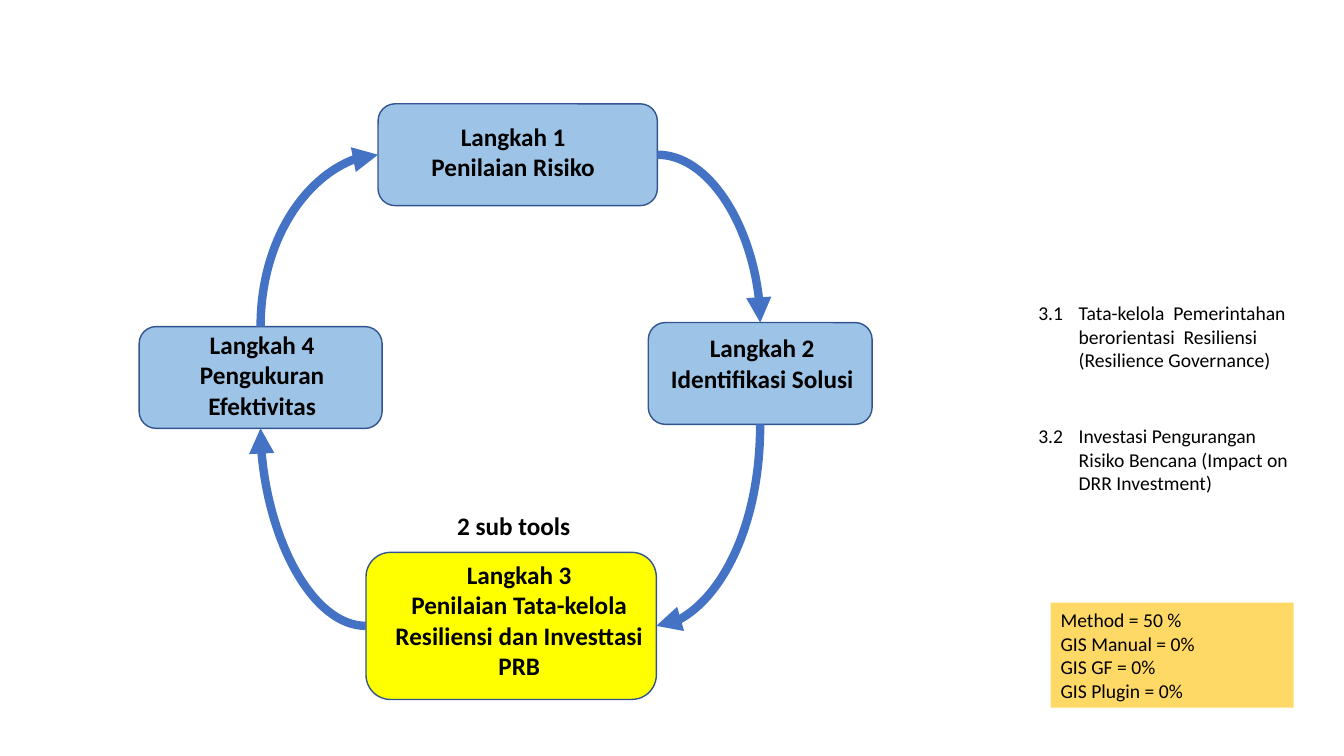
from dataclasses import dataclass

import pptx
import pptx.dml.color
import pptx.enum.shapes
import pptx.enum.text
import pptx.oxml
import pptx.oxml.ns
import pptx.util
from pptx.util import Inches

Area = tuple[float, float, float, float]  # left, top, width, height in inches


@dataclass(frozen=True)
class Theme:
    font: str = "Calibri"
    text: str = "000000"
    step: str = "9DC3E6"
    current_step: str = "FFFF00"
    outline: str = "325491"
    arrow: str = "4472C4"
    note: str = "FFD966"
    heading_size: int = 18
    body_size: int = 14
    outline_width: int = 1
    arrow_width: int = 6


@dataclass(frozen=True)
class Step:
    box: Area
    label_area: Area
    title: str
    name: str
    fill: str


@dataclass(frozen=True)
class Arrow:
    """A curve leaving one box sideways and meeting another vertically."""
    side_step: int
    side: int
    vertical_step: int
    vertical_side: int
    points_to_side: bool


@dataclass(frozen=True)
class Label:
    area: Area
    text: str
    hanging: float = 0


THEME = Theme()
TOP, LEFT, BOTTOM, RIGHT = range(4)  # connection sites of a rounded rectangle

STEPS = {
    4: Step((1.38, 3.24, 2.41, 1.01), (1.4, 3.22, 2.4, 1.01),
            "Langkah 4", "Pengukuran Efektivitas", THEME.step),
    3: Step((3.63, 5.48, 2.88, 1.46), (3.7, 5.5, 2.9, 1.31),
            "Langkah 3", "Penilaian Tata-kelola Resiliensi dan Investtasi PRB",
            THEME.current_step),
    2: Step((6.43, 3.2, 2.22, 1.01), (6.48, 3.25, 2.16, 0.71),
            "Langkah 2", "Identifikasi Solusi", THEME.step),
    1: Step((3.75, 1.03, 2.77, 1.01), (3.94, 1.15, 2.3, 0.71),
            "Langkah 1", "Penilaian Risiko", THEME.step),
}

ARROWS = [
    Arrow(1, RIGHT, 2, TOP, False),
    Arrow(3, RIGHT, 2, BOTTOM, True),
    Arrow(3, LEFT, 4, BOTTOM, False),
    Arrow(1, LEFT, 4, TOP, True),
]

SUB_TOOLS = [
    Label((10.2, 2.94, 2.87, 0.81), "3.1\tTata-kelola  Pemerintahan berorientasi  "
          "Resiliensi (Resilience Governance)", 0.4),
    Label((10.2, 4.16, 2.83, 0.81), "3.2\tInvestasi Pengurangan Risiko Bencana "
          "(Impact on DRR Investment)", 0.4),
]
SUB_TOOLS_HEADING = Label((4.43, 5.01, 1.33, 0.4), "2 sub tools")
PROGRESS = Label((10.42, 5.98, 2.41, 1.04),
                 "Method = 50 %\nGIS Manual = 0%\nGIS GF = 0%\nGIS Plugin = 0%")


def color(value: str) -> pptx.dml.color.RGBColor:
    return pptx.dml.color.RGBColor.from_string(value)


def inches(area: Area) -> list[pptx.util.Length]:
    return [Inches(length) for length in area]


def write_text(shape, text: str, heading: bool, hanging: float = 0) -> None:
    frame = shape.text_frame
    frame.word_wrap = True
    frame.text = text
    for paragraph in frame.paragraphs:
        alignment = pptx.enum.text.PP_ALIGN
        paragraph.alignment = alignment.CENTER if heading else alignment.LEFT
        if hanging:
            properties = paragraph._p.get_or_add_pPr()
            properties.set("marL", str(Inches(hanging)))
            properties.set("indent", str(-Inches(hanging)))
        for run in paragraph.runs:
            run.font.name = THEME.font
            run.font.size = pptx.util.Pt(THEME.heading_size if heading else THEME.body_size)
            run.font.bold = heading
            run.font.color.rgb = color(THEME.text)


def add_label(slide, label: Label, heading: bool = False):
    shape = slide.shapes.add_textbox(*inches(label.area))
    write_text(shape, label.text, heading, label.hanging)
    return shape


def add_box(slide, area: Area, preset, fill: str, outlined: bool):
    shape = slide.shapes.add_shape(preset, *inches(area))
    shape.shadow.inherit = False
    shape.fill.solid()
    shape.fill.fore_color.rgb = color(fill)
    if outlined:
        shape.line.color.rgb = color(THEME.outline)
        shape.line.width = pptx.util.Pt(THEME.outline_width)
    else:
        shape.line.fill.background()
    return shape


def add_arrow(slide, arrow: Arrow, boxes: dict) -> None:
    connector = slide.shapes.add_connector(
        pptx.enum.shapes.MSO_CONNECTOR.CURVE, 0, 0, 0, 0)
    connector.begin_connect(boxes[arrow.side_step], arrow.side)
    connector.end_connect(boxes[arrow.vertical_step], arrow.vertical_side)
    connector.line.color.rgb = color(THEME.arrow)
    connector.line.width = pptx.util.Pt(THEME.arrow_width)
    # Quarter curve, arrowhead and no shadow
    properties = connector._element.spPr
    properties.find(pptx.oxml.ns.qn("a:prstGeom")).set("prst", "curvedConnector2")
    end = "headEnd" if arrow.points_to_side else "tailEnd"
    namespace = pptx.oxml.ns.nsdecls("a")
    connector.line._get_or_add_ln().append(
        pptx.oxml.parse_xml(f'<a:{end} {namespace} type="triangle"/>'))
    properties.append(pptx.oxml.parse_xml(f"<a:effectLst {namespace}/>"))


def main() -> None:
    presentation = pptx.Presentation()
    presentation.slide_width = Inches(13.33)
    presentation.slide_height = Inches(7.5)
    slide = presentation.slides.add_slide(presentation.slide_layouts[6])
    presets = pptx.enum.shapes.MSO_SHAPE

    # Sub tools of step 3
    for sub_tool in SUB_TOOLS:
        add_label(slide, sub_tool)

    # Cycle of steps
    boxes = {number: add_box(slide, step.box, presets.ROUNDED_RECTANGLE, step.fill, True)
             for number, step in STEPS.items()}
    for arrow in ARROWS:
        add_arrow(slide, arrow, boxes)
    for step in STEPS.values():
        add_label(slide, Label(step.label_area, f"{step.title}\n{step.name}"), heading=True)

    # Progress note
    note = add_box(slide, PROGRESS.area, presets.RECTANGLE, THEME.note, False)
    write_text(note, PROGRESS.text, heading=False)

    # Heading above step 3
    heading = add_label(slide, SUB_TOOLS_HEADING, heading=True)
    heading.text_frame.word_wrap = False

    presentation.save("out.pptx")


if __name__ == "__main__":
    main()
